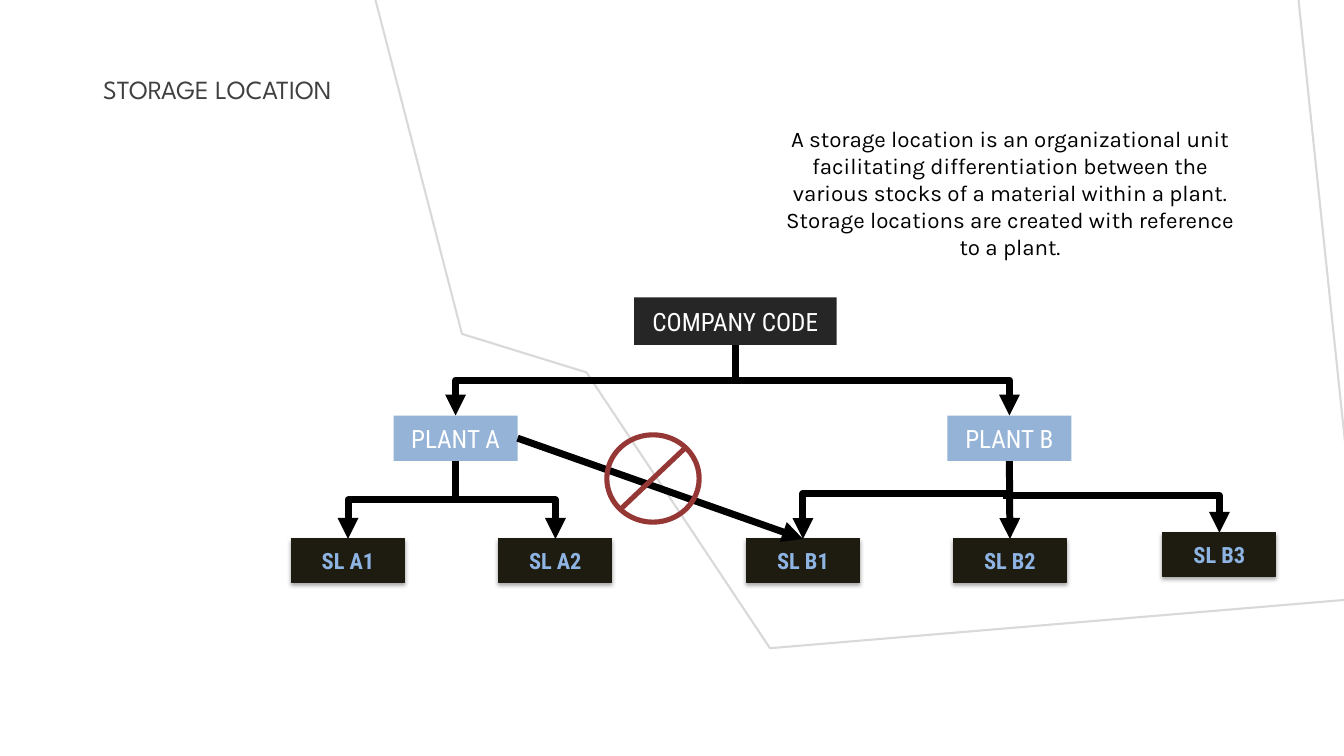
from dataclasses import dataclass

from lxml.etree import SubElement
from pptx import Presentation
from pptx.dml.color import RGBColor
from pptx.enum.shapes import MSO_CONNECTOR as Link, MSO_SHAPE as Preset
from pptx.enum.text import MSO_ANCHOR as Anchor, PP_ALIGN as Align
from pptx.oxml.ns import qn
from pptx.util import Pt


@dataclass(frozen=True)
class Theme:
    """Colours, fonts and type sizes of the slide."""
    outline: str = "D9D9D9"
    ink: str = "000000"
    heading: str = "404040"
    company: str = "262626"
    plant: str = "95B3D7"
    store: str = "1E1C11"
    store_text: str = "8EB4E3"
    white: str = "FFFFFF"
    ban: str = "953735"
    title_font: str = "League Spartan"
    body_font: str = "Karla"
    label_font: str = "Roboto Condensed"
    title_size: float = 18.7
    body_size: float = 16
    unit_size: float = 18
    store_size: float = 16
    link_width: float = 5


@dataclass(frozen=True)
class Box:
    """A rectangle in points."""
    left: float
    top: float
    width: float
    height: float

    @property
    def middle(self):
        """Horizontal centre."""
        return self.left + self.width / 2

    @property
    def bottom(self):
        """Lower edge."""
        return self.top + self.height

    @property
    def lengths(self):
        """Left, top, width and height as slide lengths."""
        return Pt(self.left), Pt(self.top), Pt(self.width), Pt(self.height)

    def inner(self, middle, top, width, height):
        """Return a box centred at an offset inside this one."""
        return Box(self.left + middle - width / 2, self.top + top, width, height)


THEME = Theme()


def colour(code):
    """Turn a hex code into a colour."""
    return RGBColor.from_string(code)


def write(frame, text, font, size, ink, align, bold=False):
    """Put one run of text in a frame."""
    para = frame.paragraphs[0]
    para.alignment = align
    span = para.add_run()
    span.text = text
    span.font.name, span.font.size, span.font.bold = font, Pt(size), bold
    span.font.color.rgb = colour(ink)


def add_text(page, box, text, font, size, ink, align):
    """Place a wrapped text box with even insets."""
    frame = page.shapes.add_textbox(*box.lengths).text_frame
    frame.word_wrap = True
    frame.margin_left = frame.margin_right = Pt(9.6)
    frame.margin_top = frame.margin_bottom = Pt(9.6)
    write(frame, text, font, size, ink, align)


def add_backdrop(page, box):
    """Draw the large angular outline behind the content."""
    corners = [(0, 0), (72, 278), (161, 305.5), (292, 502.5), (714.5, 467), (668.5, 29.5)]
    points = [(Pt(box.left + x), Pt(box.top + y)) for x, y in corners]
    builder = page.shapes.build_freeform(*points[0])
    builder.add_line_segments(points[1:], close=True)
    outline = builder.convert_to_shape()
    outline.shadow.inherit = False
    outline.fill.background()
    outline.line.color.rgb = colour(THEME.outline)
    outline.line.width = Pt(1.5)


def add_node(page, box, text, fill, size, ink, bold=False):
    """Draw one labelled rectangle and return it."""
    node = page.shapes.add_shape(Preset.RECTANGLE, *box.lengths)
    node.shadow.inherit = False
    node.fill.solid()
    node.fill.fore_color.rgb = colour(fill)
    node.line.fill.background()
    frame = node.text_frame
    frame.word_wrap = False
    frame.vertical_anchor = Anchor.MIDDLE
    write(frame, text, THEME.label_font, size, ink, Align.CENTER, bold)
    return node


def add_store(page, box, text):
    """Draw one storage location with its soft shadow."""
    node = add_node(page, box, text, THEME.store, THEME.store_size, THEME.store_text, True)
    node.line.color.rgb = colour(THEME.store)
    node.line.width = Pt(0.75)
    effects = node._element.spPr.find(qn("a:effectLst"))
    shadow = SubElement(effects, qn("a:outerShdw"), blurRad=str(Pt(3.1)), dist=str(Pt(1.8)),
                        dir="5400000", algn="t", rotWithShape="0")
    shade = SubElement(shadow, qn("a:srgbClr"), val=THEME.ink)
    SubElement(shade, qn("a:alpha"), val="35000")


def add_arrow(page, start, end, kind=Link.STRAIGHT):
    """Draw a heavy arrow and return it."""
    arrow = page.shapes.add_connector(kind, *map(Pt, (*start, *end)))
    arrow.line.color.rgb = colour(THEME.ink)
    arrow.line.width = Pt(THEME.link_width)
    stroke = arrow._element.spPr.find(qn("a:ln"))
    SubElement(stroke, qn("a:tailEnd"), type="triangle")
    SubElement(arrow._element.spPr, qn("a:effectLst"))
    return arrow


def add_branch(page, start, end):
    """Draw an arrow that goes down, across and down again."""
    across, down = abs(end[0] - start[0]), end[1] - start[1]
    x, y = (start[0] + end[0]) / 2, (start[1] + end[1]) / 2
    side = 1 if end[0] > start[0] else -1
    arrow = add_arrow(page, (x + side * down / 2, y - across / 2),
                      (x - side * down / 2, y + across / 2), Link.ELBOW)
    turn = 270 if side > 0 else 90
    arrow._element.spPr.find(qn("a:xfrm")).set("rot", str(turn * 60000))


def add_corner(page, start, end):
    """Draw an arrow that goes across and then down."""
    arrow = add_arrow(page, start, end, Link.ELBOW)
    arrow._element.spPr.find(qn("a:prstGeom")).set("prst", "bentConnector2")


def add_ban(page, box):
    """Draw the prohibition sign."""
    sign = page.shapes.add_shape(Preset.NO_SYMBOL, *box.lengths)
    sign.rotation = 90
    sign.adjustments[0] = 0.055
    sign.shadow.inherit = False
    sign.fill.solid()
    sign.fill.fore_color.rgb = colour(THEME.ban)
    sign.line.fill.background()


def add_hierarchy(page, box):
    """Draw the company code, its plants and their storage locations."""
    company = box.inner(317.2, 0, 144.7, 34)
    plant_a, plant_b = [box.inner(middle, 84.4, 88.6, 32.4) for middle in (117.4, 513)]
    stores = [box.inner(middle, top, 80.8, 31)
              for middle, top in ((40.6, 172.6), (188.7, 172.6), (365.6, 172.6),
                                  (513.4, 172.6), (663, 168.2))]
    a1, a2, b1, b2, b3 = stores
    fork = plant_b.bottom + 23.4

    add_arrow(page, (plant_b.middle, plant_b.bottom), (b2.middle, b2.top))
    add_corner(page, (b2.middle, fork), (b1.middle, b1.top))
    add_corner(page, (plant_b.middle - 4.4, fork + 1.4), (b3.middle, b3.top))
    for store, name in zip(stores, ("SL A1", "SL A2", "SL B1", "SL B2", "SL B3")):
        add_store(page, store, name)
    for unit, name, fill in ((company, "COMPANY CODE", THEME.company),
                             (plant_a, "PLANT A", THEME.plant),
                             (plant_b, "PLANT B", THEME.plant)):
        add_node(page, unit, name, fill, THEME.unit_size, THEME.white)
    for parent, child in ((plant_a, a1), (plant_a, a2), (company, plant_a), (company, plant_b)):
        add_branch(page, (parent.middle, parent.bottom), (child.middle, child.top))
    add_arrow(page, (plant_a.left + plant_a.width, plant_a.top + plant_a.height / 2),
              (b1.middle, b1.top))
    add_ban(page, box.inner(258.4, 94.6, 66, 69.6))


def build_slide(page, box):
    """Lay out the storage location slide."""
    add_backdrop(page, Box(box.left + 258, box.top - 39.5, 714.5, 502.5))
    add_text(page, Box(box.left + 550, box.top + 80, 343, 140),
             "A storage location is an organizational unit facilitating differentiation "
             "between the various stocks of a material within a plant. Storage locations "
             "are created with reference to a plant.",
             THEME.body_font, THEME.body_size, THEME.ink, Align.CENTER)
    add_text(page, Box(box.left + 64, box.top + 42.5, 218, 47.5), "STORAGE LOCATION",
             THEME.title_font, THEME.title_size, THEME.heading, Align.LEFT)
    add_hierarchy(page, Box(box.left + 208, box.top + 212.4, 704, 204))


def main():
    """Build and save the deck."""
    deck = Presentation()
    deck.slide_width, deck.slide_height = Pt(960), Pt(540)
    page = deck.slides.add_slide(deck.slide_layouts[6])
    build_slide(page, Box(0, 0, 960, 540))
    deck.save("out.pptx")


if __name__ == "__main__":
    main()
